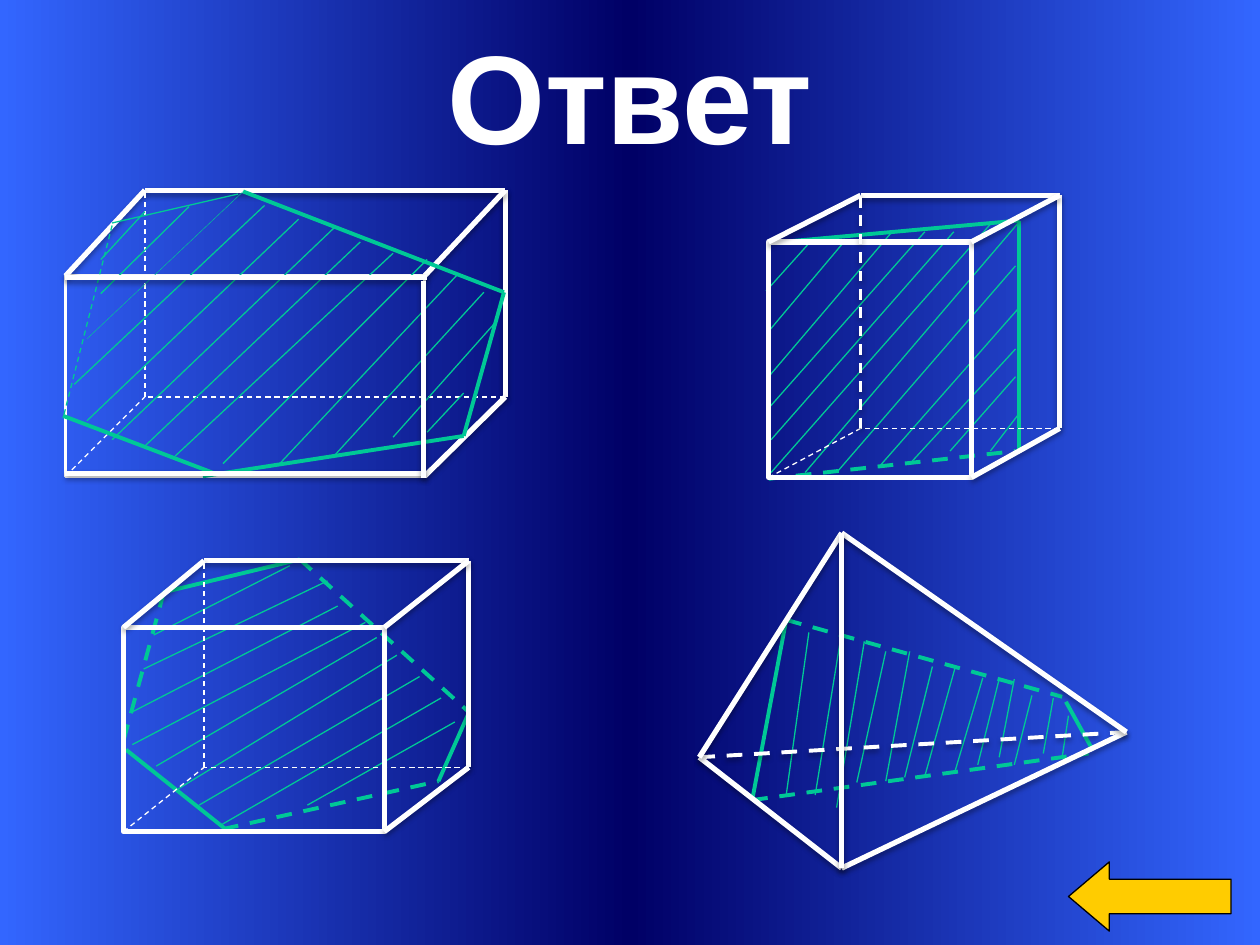
from copy import deepcopy

from lxml.etree import SubElement
from pptx import Presentation
from pptx.dml.color import RGBColor
from pptx.enum.dml import MSO_LINE
from pptx.enum.shapes import MSO_CONNECTOR, MSO_SHAPE
from pptx.enum.text import MSO_ANCHOR, MSO_AUTO_SIZE, PP_ALIGN
from pptx.oxml.ns import qn
from pptx.util import Pt

PX = 9144
WIDTH, HEIGHT = 1000, 750

WHITE = RGBColor(0xFF, 0xFF, 0xFF)
BLACK = RGBColor(0x00, 0x00, 0x00)
BLUE = RGBColor(0x33, 0x66, 0xFF)
NAVY = RGBColor(0x00, 0x00, 0x66)
GREEN = RGBColor(0x00, 0xC8, 0x96)
YELLOW = RGBColor(0xFF, 0xCC, 0x00)

THICK, MEDIUM, THIN = 3, 2.25, 0.75

CUBE_HATCH = [
    (-2, 76, 34, 36), (0, 108, 59, 38), (0, 144, 98, 29), (0, 169, 124, 29),
    (2, 194, 147, 29), (2, 220, 176, 23), (29, 220, 199, 21), (54, 220, 196, 56),
    (89, 214, 199, 89), (114, 211, 196, 122), (144, 203, 196, 144), (176, 203, 199, 173),
]
LONG_HATCH = [
    (29, 82, 99, 13), (88, 211, 261, 50), (8, 154, 159, 12), (18, 183, 186, 23),
    (38, 198, 214, 30), (64, 203, 235, 41), (126, 217, 288, 55), (171, 217, 312, 67),
    (214, 211, 333, 81), (261, 196, 343, 104), (288, 192, 317, 161), (29, 55, 64, 17),
    (38, 26, 138, 3),
]
LOW_HATCH = [
    (77, 210, 252, 109), (146, 194, 263, 128), (60, 194, 235, 92), (42, 182, 217, 75),
    (26, 163, 201, 61), (7, 146, 192, 49), (16, 86, 162, 16), (7, 120, 170, 36),
    (24, 59, 132, 4),
]
PYRAMID_HATCH = [
    (163, 194, 185, 106), (131, 86, 109, 218), (113, 79, 92, 208), (87, 79, 69, 208),
    (148, 94, 125, 198), (167, 94, 148, 197), (203, 107, 179, 193), (203, 189, 225, 115),
    (221, 184, 238, 116), (238, 178, 250, 116), (250, 184, 264, 129), (273, 175, 281, 131),
    (288, 178, 293, 145),
]


def px(*values):
    return [v * PX for v in values]


def add_effects(shape, shadow):
    effects = SubElement(shape.element.spPr, qn("a:effectLst"))
    if shadow:
        outer = SubElement(effects, qn("a:outerShdw"), blurRad="39400", dist="22900",
                           dir="5400000", rotWithShape="0")
        color = SubElement(outer, qn("a:srgbClr"), val="000000")
        SubElement(color, qn("a:alpha"), val="35000")


def add_lines(sp, box, lines, color, width, dashed=False):
    left, top = box
    for x1, y1, x2, y2 in lines:
        c = sp.add_connector(MSO_CONNECTOR.STRAIGHT,
                             *px(left + x1, top + y1, left + x2, top + y2))
        c.line.color.rgb = color
        c.line.width = Pt(width)
        if dashed:
            c.line.dash_style = MSO_LINE.DASH
        add_effects(c, color == WHITE and width > 1)


def add_section(sp, box, hatch, solid, dashed):
    add_lines(sp, box, hatch, GREEN, THIN)
    add_lines(sp, box, solid, GREEN, MEDIUM)
    add_lines(sp, box, dashed, GREEN, MEDIUM, True)


def corners(x, y, w, h):
    return [(x, y), (x + w, y), (x + w, y + h), (x, y + h)]


def add_prism(sp, box, front, back, front_width=THICK, hidden_width=THIN):
    left, top = box
    x, y, w, h = front
    face = sp.add_shape(MSO_SHAPE.RECTANGLE, *px(left + x, top + y, w, h))
    face.shadow.inherit = False
    face.fill.background()
    face.line.color.rgb = WHITE
    face.line.width = Pt(front_width)
    far = corners(*back)
    far_edges = [a + b for a, b in zip(far, far[1:] + far[:1])]
    depth_edges = [a + b for a, b in zip(corners(*front), far)]
    add_lines(sp, box, far_edges[:2] + depth_edges[:3], WHITE, THICK)
    add_lines(sp, box, [far_edges[2], depth_edges[3]], WHITE, THIN, True)
    add_lines(sp, box, [far_edges[3]], WHITE, hidden_width, True)


def add_cube(s, box):
    sp = s.shapes.add_group_shape().shapes
    add_section(sp, box, CUBE_HATCH,
                [(199, 20, 199, 203), (0, 38, 199, 20), (0, 38, 0, 225)],
                [(0, 225, 196, 203)])
    add_prism(sp, box, (0, 37, 161, 187), (73, 0, 158, 185), hidden_width=1.5)


def add_long_prism(s, box):
    sp = s.shapes.add_group_shape().shapes
    add_prism(sp, box, (1, 68, 285, 159), (64, 0, 286, 164), front_width=2)
    add_lines(sp, box, [(18, 118, 142, 1)], GREEN, 0.25)
    add_section(sp, box, LONG_HATCH,
                [(142, 1, 349, 81), (349, 81, 317, 195),
                 (110, 227, 317, 195), (120, 225, -1, 179)], [])
    add_lines(sp, box, [(38, 28, -1, 181)], GREEN, THIN, True)
    add_lines(sp, box, [(1, 225, 285, 225), (1, 69, 288, 69), (285, 72, 285, 228)],
              WHITE, THICK)


def add_low_prism(s, box):
    sp = s.shapes.add_group_shape().shapes
    add_section(sp, box, LOW_HATCH,
                [(32, 25, 140, -1), (2, 150, 81, 213), (274, 121, 250, 175)],
                [(140, -1, 274, 120), (32, 25, 0, 143), (79, 213, 250, 175)])
    add_prism(sp, box, (0, 53, 207, 162), (64, 0, 210, 164))


def add_pyramid(s, box):
    sp = s.shapes.add_group_shape().shapes
    add_section(sp, box, PYRAMID_HATCH,
                [(291, 134, 311, 170), (42, 212, 69, 69)],
                [(42, 212, 309, 175), (69, 69, 288, 130)])
    apex, left, right, bottom = (113, 0), (0, 178), (339, 158), (113, 266)
    add_lines(sp, box, [left + right], WHITE, MEDIUM, True)
    add_lines(sp, box, [left + bottom, bottom + right, apex + right, left + apex,
                        bottom + apex], WHITE, THICK)


def add_backdrop(s, box):
    rect = s.shapes.add_shape(MSO_SHAPE.RECTANGLE, *px(*box))
    rect.shadow.inherit = False
    rect.line.fill.background()
    rect.fill.gradient()
    rect.fill.gradient_angle = 0
    stops = rect.element.xpath(".//a:gsLst")[0]
    stops.insert(1, deepcopy(stops[0]))
    for stop, position, color in zip(rect.fill.gradient_stops, (0, 0.5, 1), (BLUE, NAVY, BLUE)):
        stop.position = position
        stop.color.rgb = color
    s.shapes.element.insert(2, rect.element)


def add_title(s, box):
    title = s.shapes.title
    title.left, title.top, title.width, title.height = px(*box)
    tf = title.text_frame
    tf.text = "Ответ"
    tf.auto_size = MSO_AUTO_SIZE.NONE
    tf.vertical_anchor = MSO_ANCHOR.TOP
    p = tf.paragraphs[0]
    p.alignment = PP_ALIGN.CENTER
    font = p.runs[0].font
    font.name, font.size, font.bold = "Arial", Pt(72), True
    font.color.rgb = WHITE


def add_back_arrow(s, box):
    arrow = s.shapes.add_shape(MSO_SHAPE.LEFT_ARROW, *px(*box))
    arrow.shadow.inherit = False
    arrow.adjustments[0], arrow.adjustments[1] = 0.5, 0.59
    arrow.fill.solid()
    arrow.fill.fore_color.rgb = YELLOW
    arrow.line.color.rgb = BLACK
    arrow.line.width = Pt(0.75)


def main():
    prs = Presentation()
    prs.slide_width, prs.slide_height = px(WIDTH, HEIGHT)
    s = prs.slides.add_slide(prs.slide_layouts[5])
    add_backdrop(s, (0, 0, WIDTH, HEIGHT))
    add_title(s, (0, 10, WIDTH, 125))
    add_back_arrow(s, (848, 684, 129, 55))
    add_cube(s, (610, 155))
    add_long_prism(s, (51, 151))
    add_low_prism(s, (98, 445))
    add_pyramid(s, (555, 423))
    prs.save("out.pptx")


if __name__ == "__main__":
    main()
